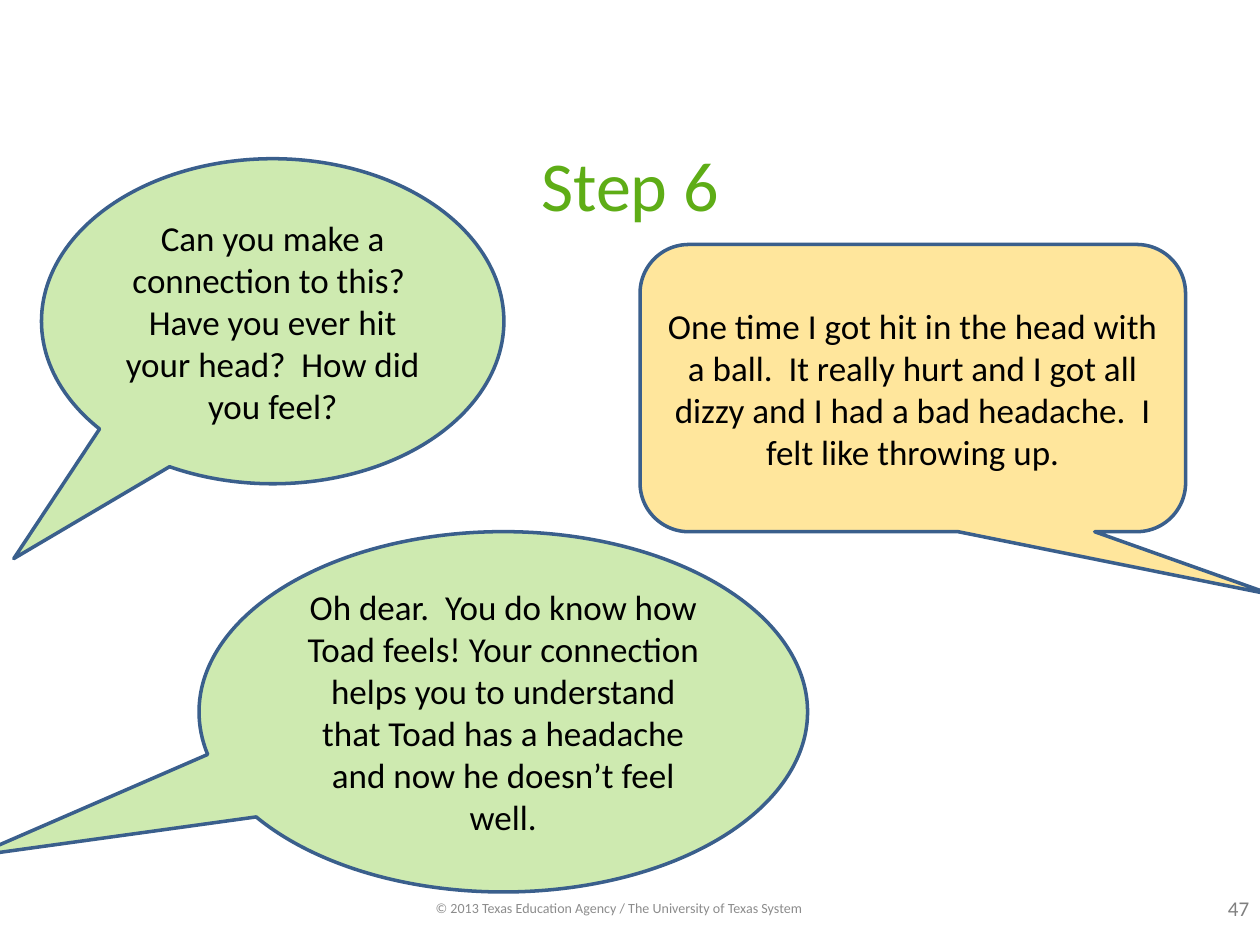
import pptx
import pptx.dml.color
import pptx.enum.shapes
import pptx.enum.text
import pptx.oxml
import pptx.oxml.ns
import pptx.util

SHAPES = pptx.enum.shapes.MSO_SHAPE
OUTLINE = "3A5F8C"
GREEN = "CEEAB0"
AMBER = "FFC000"


def color(hex_string):
    return pptx.dml.color.RGBColor.from_string(hex_string)


def write_text(shape, text, size, hex_string):
    """Fill the shape with one centred, wrapped run of Calibri."""
    frame = shape.text_frame
    frame.word_wrap = True
    frame.vertical_anchor = pptx.enum.text.MSO_ANCHOR.MIDDLE
    paragraph = frame.paragraphs[0]
    paragraph.alignment = pptx.enum.text.PP_ALIGN.CENTER
    run = paragraph.add_run()
    run.text = text
    run.font.name = "Calibri"
    run.font.size = pptx.util.Pt(size)
    run.font.color.rgb = color(hex_string)


presentation = pptx.Presentation()
presentation.slide_width = pptx.util.Inches(10)
presentation.slide_height = pptx.util.Inches(7.5)
slide = presentation.slides.add_slide(presentation.slide_layouts[5])

title = slide.shapes.title
title.left, title.top, title.width, title.height = map(pptx.util.Inches, (0.5, 1.04, 9, 0.84))
write_text(title, "Step 6", 40, "5EAD16")

footers = [
    ((9.58, 7.07, 0.5, 0.27), "47", 12, "808080"),
    ((2.08, 7.08, 5.67, 0.25),
     "© 2013 Texas Education Agency / The University of Texas System", 8, "8C8C8C"),
]
for box, text, size, text_color in footers:
    footer = slide.shapes.add_textbox(*map(pptx.util.Inches, box))
    write_text(footer, text, size, text_color)

# Preset, box, pointer adjustments, fill, opacity in percent, wording
callouts = [
    (SHAPES.OVAL_CALLOUT, (0.33, 1.26, 3.67, 2.58), (-0.56, 0.73), GREEN, 100,
     "Can you make a connection to this?  Have you ever hit your head?  "
     "How did you feel?"),
    (SHAPES.ROUNDED_RECTANGULAR_CALLOUT, (5.08, 1.94, 4.33, 2.28), (0.66, 0.72, 0.17), AMBER, 39,
     "One time I got hit in the head with a ball.  It really hurt and I got all "
     "dizzy and I had a bad headache.  I felt like throwing up."),
    (SHAPES.OVAL_CALLOUT, (1.58, 4.22, 4.83, 2.86), (-0.87, 0.4), GREEN, 100,
     "Oh dear.  You do know how Toad feels! Your connection helps you to understand "
     "that Toad has a headache and now he doesn’t feel well."),
]
for preset, box, adjustments, fill_color, opacity, text in callouts:
    callout = slide.shapes.add_shape(preset, *map(pptx.util.Inches, box))
    callout.shadow.inherit = False
    for index, adjustment in enumerate(adjustments):
        callout.adjustments[index] = adjustment
    callout.fill.solid()
    callout.fill.fore_color.rgb = color(fill_color)
    if opacity < 100:
        fill = callout.element.spPr.find(pptx.oxml.ns.qn("a:solidFill"))
        alpha = pptx.oxml.parse_xml(
            f'<a:alpha {pptx.oxml.ns.nsdecls("a")} val="{opacity * 1000}"/>')
        fill[0].append(alpha)
    callout.line.color.rgb = color(OUTLINE)
    callout.line.width = pptx.util.Pt(2)
    write_text(callout, text, 20, "000000")

presentation.save("out.pptx")
